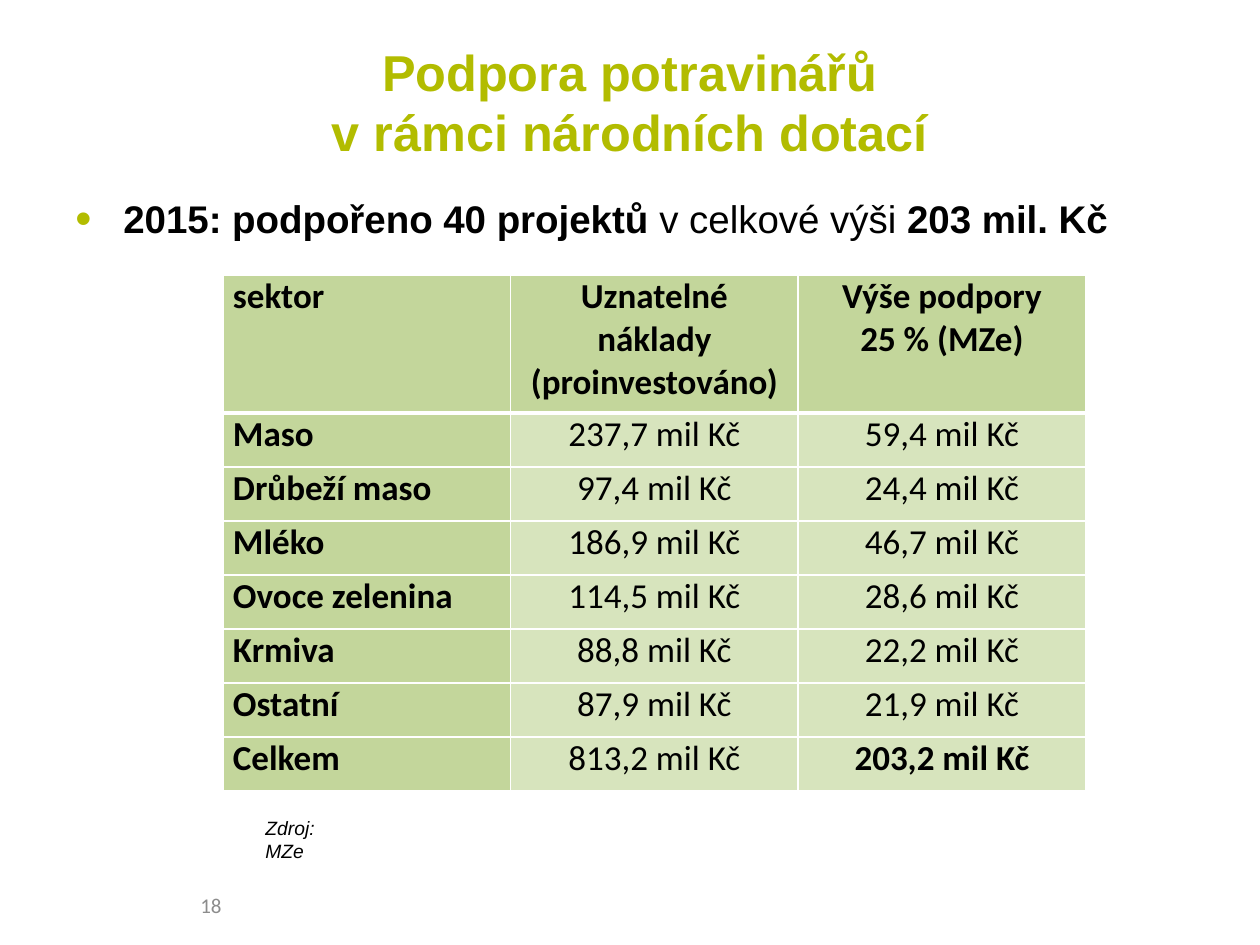
from lxml import etree
from pptx import Presentation
from pptx import util as u
from pptx.dml.color import RGBColor
from pptx.enum import text
from pptx.oxml.ns import qn

LIME = RGBColor(0xB2, 0xBC, 0x00)
BLACK = RGBColor(0x00, 0x00, 0x00)
GRAY = RGBColor(0x8C, 0x8C, 0x8C)
GREEN = RGBColor(0xC3, 0xD6, 0x9B)
PALE = RGBColor(0xD7, 0xE4, 0xBD)
WHITE = RGBColor(0xFF, 0xFF, 0xFF)
LEFT, CENTER, JUSTIFY = (text.PP_ALIGN.LEFT, text.PP_ALIGN.CENTER,
                         text.PP_ALIGN.JUSTIFY)
TOP, MIDDLE = text.MSO_ANCHOR.TOP, text.MSO_ANCHOR.MIDDLE

HEADER = ["sektor", "Uznatelné náklady (proinvestováno)",
          "Výše podpory\n25 % (MZe)"]
SECTORS = [
    ("Maso", "237,7", "59,4"),
    ("Drůbeží maso", "97,4", "24,4"),
    ("Mléko", "186,9", "46,7"),
    ("Ovoce zelenina", "114,5", "28,6"),
    ("Krmiva", "88,8", "22,2"),
    ("Ostatní", "87,9", "21,9"),
    ("Celkem", "813,2", "203,2"),
]


def px(n):
    """Turn pixels into EMU."""
    return u.Emu(round(n * 914400 / 126))


def write(tf, content, size=20, font="Calibri", color=BLACK, bold=False,
          italic=False, align=LEFT, bullet=None):
    """Write a string, or a list of (string, bold) runs, into a text frame."""
    runs = [(content, bold)] if isinstance(content, str) else content
    p = tf.paragraphs[0]
    p.alignment = align
    if bullet:
        add_bullet(p, bullet)
    for words, heavy in runs:
        for i, line in enumerate(words.split("\n")):
            if i:
                p.add_line_break()
            r = p.add_run()
            r.text = line
            r.font.size, r.font.name = u.Pt(size), font
            r.font.bold, r.font.italic = heavy, italic
            r.font.color.rgb = color


def add_bullet(p, color):
    """Give a paragraph a round bullet and a hanging indent."""
    pPr = p._p.get_or_add_pPr()
    pPr.set("marL", str(px(48)))
    pPr.set("indent", str(-px(48)))
    clr = etree.SubElement(pPr, qn("a:buClr"))
    etree.SubElement(clr, qn("a:srgbClr"), val=str(color))
    etree.SubElement(pPr, qn("a:buSzPct"), val="120000")
    etree.SubElement(pPr, qn("a:buFont"), typeface="Arial")
    etree.SubElement(pPr, qn("a:buChar"), char="•")


def add_text(s, box, content, anchor=TOP, wrap=True, inset=6, **fmt):
    """Place a text box with formatted text."""
    tf = s.shapes.add_textbox(*map(px, box)).text_frame
    tf.word_wrap = wrap
    tf.vertical_anchor = anchor
    tf.margin_top = px(inset)
    write(tf, content, **fmt)


def set_borders(cell, **widths):
    """Draw white cell borders, 1 pt wide unless a side is given."""
    tcPr = cell._tc.get_or_add_tcPr()
    for side in "LRTB":
        ln = etree.SubElement(tcPr, qn(f"a:ln{side}"),
                              w=str(u.Pt(widths.get(side, 1))))
        fill = etree.SubElement(ln, qn("a:solidFill"))
        etree.SubElement(fill, qn("a:srgbClr"), val=str(WHITE))


def add_sector_table(s, box):
    """Place the table of costs and support by sector."""
    x, y, w, h = box
    row_h = 54
    rows = [HEADER] + [(name, f"{cost} mil Kč", f"{aid} mil Kč")
                       for name, cost, aid in SECTORS]
    table = s.shapes.add_table(len(rows), len(HEADER), px(x), px(y),
                               px(w), px(h)).table
    for col in table.columns:
        col.width = px(w / len(HEADER))
    for i, row in enumerate(rows):
        table.rows[i].height = px(row_h if i else h - row_h * len(SECTORS))
        for j, words in enumerate(row):
            cell = table.cell(i, j)
            heading = i == 0 or j == 0
            total = i == len(SECTORS) and j == 2
            set_borders(cell, **({"B": 3} if i == 0 else
                                 {"T": 3} if i == 1 else {}))
            cell.fill.solid()
            cell.fill.fore_color.rgb = GREEN if heading else PALE
            cell.margin_left = cell.margin_right = px(10)
            cell.margin_top = cell.margin_bottom = 0
            write(cell.text_frame, words, bold=heading or total,
                  align=CENTER if j else JUSTIFY)


def add_heading(s, box):
    """Place the title and the summary bullet below it."""
    x, y, w, h = box
    add_text(s, (x, y, w, 127), "Podpora potravinářů\nv rámci národních dotací",
             anchor=MIDDLE, size=28.8, font="Arial", color=LIME, bold=True,
             align=CENTER)
    add_text(s, (x, y + 147, w, h - 147),
             [("2015: podpořeno 40 projektů", True),
              (" v celkové výši ", False), ("203 mil. Kč", True)],
             inset=10, size=22, font="Arial", bullet=LIME)


def add_footer(s, box):
    """Place the source line and the slide number."""
    x, y, w, h = box
    add_text(s, (x + 189, y, 118, 37), "Zdroj: MZe", wrap=False, size=11,
             font="Arial", italic=True)
    add_text(s, (x, y + h - 50, w, 50), "18", anchor=MIDDLE, size=12,
             color=GRAY, align=CENTER)


def main():
    """Build the slide and save it."""
    prs = Presentation()
    prs.slide_width, prs.slide_height = px(1260), px(945)
    s = prs.slides.add_slide(prs.slide_layouts[6])
    add_heading(s, (63, 38, 1134, 237))
    add_sector_table(s, (223, 275, 863, 516))
    add_footer(s, (64, 810, 294, 120))
    prs.save("out.pptx")


if __name__ == "__main__":
    main()
